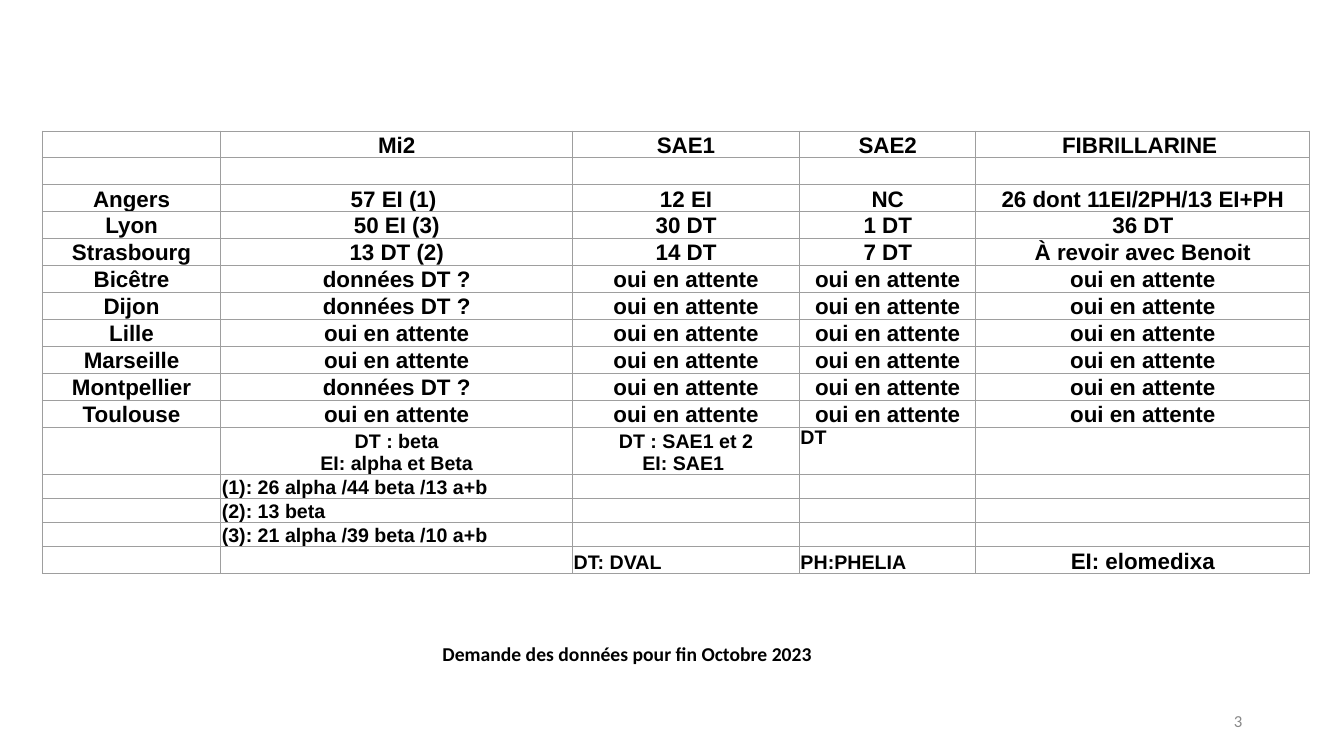
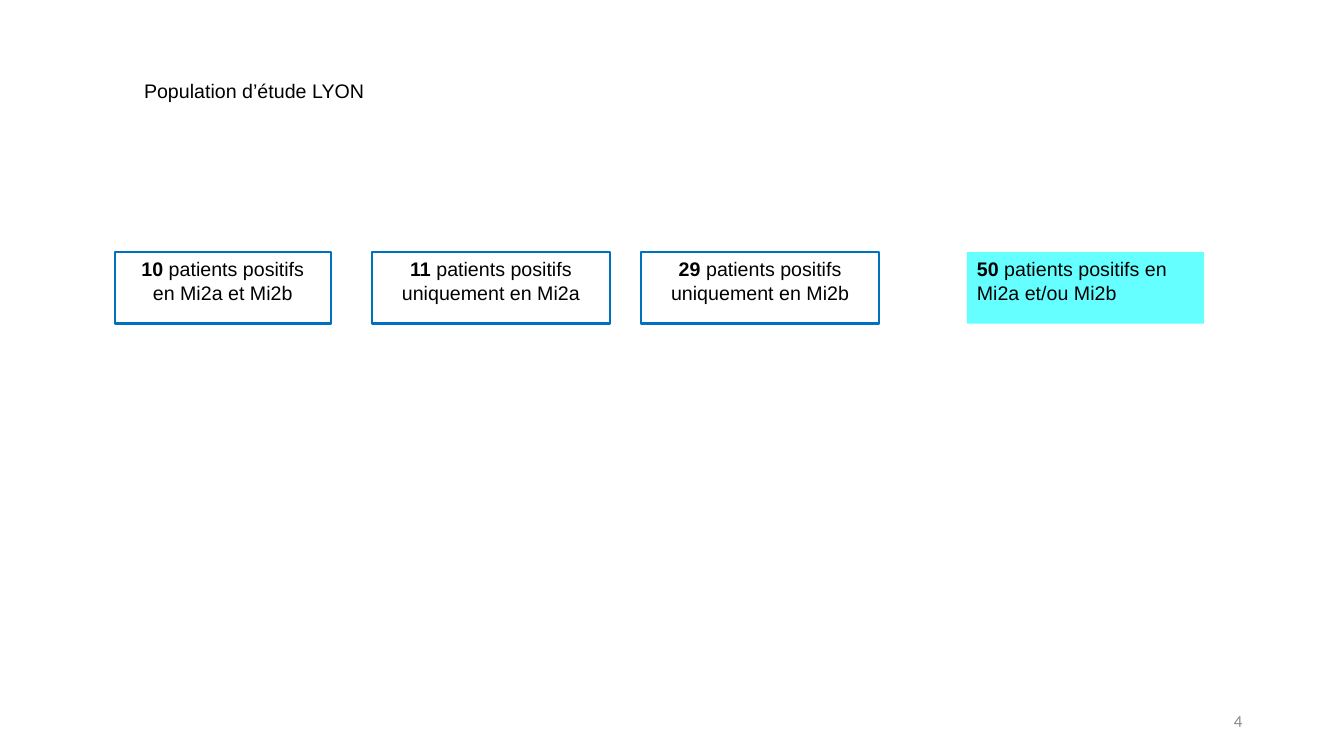
import pptx
import pptx.dml.color
import pptx.enum.shapes
import pptx.enum.text
import pptx.oxml.ns
import pptx.util
from lxml import etree

Inches, Pt = pptx.util.Inches, pptx.util.Pt
RGBColor = pptx.dml.color.RGBColor
qn = pptx.oxml.ns.qn
ALIGN, ANCHOR = pptx.enum.text.PP_ALIGN, pptx.enum.text.MSO_ANCHOR

BLACK = RGBColor(0x00, 0x00, 0x00)
GREY = RGBColor(0x88, 0x88, 0x88)
BORDER = RGBColor(0x9E, 0x9E, 0x9E)
BLUE = RGBColor(0x00, 0x70, 0xC0)
CYAN = RGBColor(0x66, 0xFF, 0xFF)

BODY = {"name": "Arial", "size": Pt(14), "bold": False}
STRONG = {**BODY, "bold": True}
HEADING = {**STRONG, "size": Pt(16)}
CAPTION = {**STRONG, "name": "Calibri"}
NUMBER = {"name": "Calibri", "size": Pt(12)}

COLUMNS = [1.77, 3.49, 2.25, 1.75, 3.31]
WAITING = "oui en attente"
DATA = "données DT ?"
RESULTS = [
    ["", "Mi2", "SAE1", "SAE2", "FIBRILLARINE "],
    [""] * 5,
    ["Angers", "57 EI (1) ", "12 EI", "NC", "26 dont 11EI/2PH/13 EI+PH"],
    ["Lyon", "50 EI (3)", "30 DT", "1 DT", "36 DT"],
    ["Strasbourg", "13 DT (2)", "14 DT", "7 DT", "À revoir avec Benoit"],
] + [[city, mi2] + [WAITING] * 3 for city, mi2 in [
    ("Bicêtre", DATA), ("Dijon", DATA), ("Lille", WAITING),
    ("Marseille", WAITING), ("Montpellier", DATA), ("Toulouse", WAITING)]]
KITS = ["", "DT : beta\nEI: alpha et Beta", "DT : SAE1 et 2\nEI: SAE1 ", "DT", ""]
NOTES = [
    ["", "(1): 26 alpha /44 beta /13 a+b", "", "", ""],
    ["", "(2): 13 beta", "", "", ""],
    ["", "(3): 21 alpha /39 beta /10 a+b", "", "", ""],
    ["", "", "DT: DVAL", "PH:PHELIA", "EI: elomedixa"],
]


def add_runs(p, runs, align=ALIGN.LEFT, color=BLACK):
    """Fill a paragraph with (text, format) runs; a newline is a line break."""
    p.alignment = align
    for text, style in runs:
        for i, line in enumerate(text.split("\n")):
            if i:
                p.add_line_break()
            r = p.add_run()
            r.text = line
            r.font.color.rgb = color
            for name, value in style.items():
                setattr(r.font, name, value)


def add_text(s, box, text, style, align=ALIGN.LEFT, anchor=ANCHOR.TOP, color=BLACK, wrap=True):
    tf = s.shapes.add_textbox(*map(Inches, box)).text_frame
    tf.word_wrap = wrap
    tf.vertical_anchor = anchor
    add_runs(tf.paragraphs[0], [(text, style)], align, color)


def new_slide(prs, number):
    s = prs.slides.add_slide(prs.slide_layouts[6])
    add_text(s, (9.42, 6.95, 3, 0.4), number, NUMBER, ALIGN.RIGHT, ANCHOR.MIDDLE, GREY)
    return s


def add_borders(cell):
    tc_pr = cell._tc.get_or_add_tcPr()
    for i, side in enumerate(("lnL", "lnR", "lnT", "lnB")):
        ln = etree.Element(qn("a:" + side), w=str(Pt(0.75)))
        fill = etree.SubElement(ln, qn("a:solidFill"))
        etree.SubElement(fill, qn("a:srgbClr"), val=str(BORDER))
        tc_pr.insert(i, ln)


def fill_cell(cell, text, style, align, anchor=ANCHOR.BOTTOM):
    margins = {"margin_left": Inches(0.01), "margin_right": Inches(0.01),
               "margin_top": 0, "margin_bottom": 0}
    for name, value in margins.items():
        setattr(cell, name, value)
    cell.vertical_anchor = anchor
    cell.fill.background()
    add_borders(cell)
    p = cell.text_frame.paragraphs[0]
    if text:
        add_runs(p, [(text, style)], align)
    else:
        # An empty cell needs its own text size, or its row grows
        etree.SubElement(p._p, qn("a:endParaRPr"), sz=str(int(style["size"].pt * 100)))


def add_results_table(s, left, top):
    rows = RESULTS + [KITS] + NOTES
    heights = [0.26] * len(RESULTS) + [0.47] + [0.24] * 3 + [0.26]
    frame = s.shapes.add_table(len(rows), len(COLUMNS), Inches(left), Inches(top),
                               Inches(sum(COLUMNS)), Inches(sum(heights)))
    table = frame.table
    table.first_row = table.horz_banding = False
    for column, width in zip(table.columns, COLUMNS):
        column.width = Inches(width)
    for i, (row, height) in enumerate(zip(rows, heights)):
        table.rows[i].height = Inches(height)
        for j, text in enumerate(row):
            large = i < len(RESULTS) or (i == len(rows) - 1 and j == 4)
            kit = row is KITS
            centred = large or (kit and j < 3)
            fill_cell(table.cell(i, j), text, HEADING if large else STRONG,
                      ALIGN.CENTER if centred else ALIGN.LEFT,
                      ANCHOR.TOP if kit and j == 3 else ANCHOR.BOTTOM)


def add_patient_box(s, box, count, lines, align=ALIGN.CENTER, fill=None):
    """A count and its wording: outlined, or filled when a colour is given."""
    sp = s.shapes.add_shape(pptx.enum.shapes.MSO_SHAPE.RECTANGLE, *map(Inches, box))
    sp.shadow.inherit = False
    if fill is None:
        sp.fill.background()
        sp.line.color.rgb = BLUE
        sp.line.width = Pt(1.5)
    else:
        sp.fill.solid()
        sp.fill.fore_color.rgb = fill
        sp.line.fill.background()
    tf = sp.text_frame
    tf.word_wrap = True
    tf.vertical_anchor = ANCHOR.TOP
    add_runs(tf.paragraphs[0], [(count + " ", STRONG), (lines[0], BODY)], align)
    for line in lines[1:]:
        add_runs(tf.add_paragraph(), [(line, BODY)], align)


def results_slide(prs):
    s = new_slide(prs, "3")
    add_results_table(s, 0.42, 1.3)
    add_text(s, (4.29, 6.32, 3.9, 0.34), "Demande des données pour fin Octobre 2023",
             CAPTION, wrap=False)


def population_slide(prs):
    s = new_slide(prs, "4")
    top, height = 2.5, 0.71
    groups = [(1.14, 2.14, "10", "en Mi2a et Mi2b"),
              (3.69, 2.36, "11", "uniquement en Mi2a"),
              (6.36, 2.36, "29", "uniquement en Mi2b")]
    for left, width, count, group in groups:
        add_patient_box(s, (left, top, width, height), count, ["patients positifs", group])
    add_patient_box(s, (9.59, top, 2.35, height), "50",
                    ["patients positifs en Mi2a et/ou Mi2b"], ALIGN.LEFT, CYAN)
    add_text(s, (1.33, 0.73, 11.08, 0.53), "Population d’étude LYON", BODY)


def main():
    prs = pptx.Presentation()
    prs.slide_width, prs.slide_height = Inches(13.33), Inches(7.5)
    results_slide(prs)
    population_slide(prs)
    prs.save("out.pptx")


if __name__ == "__main__":
    main()
